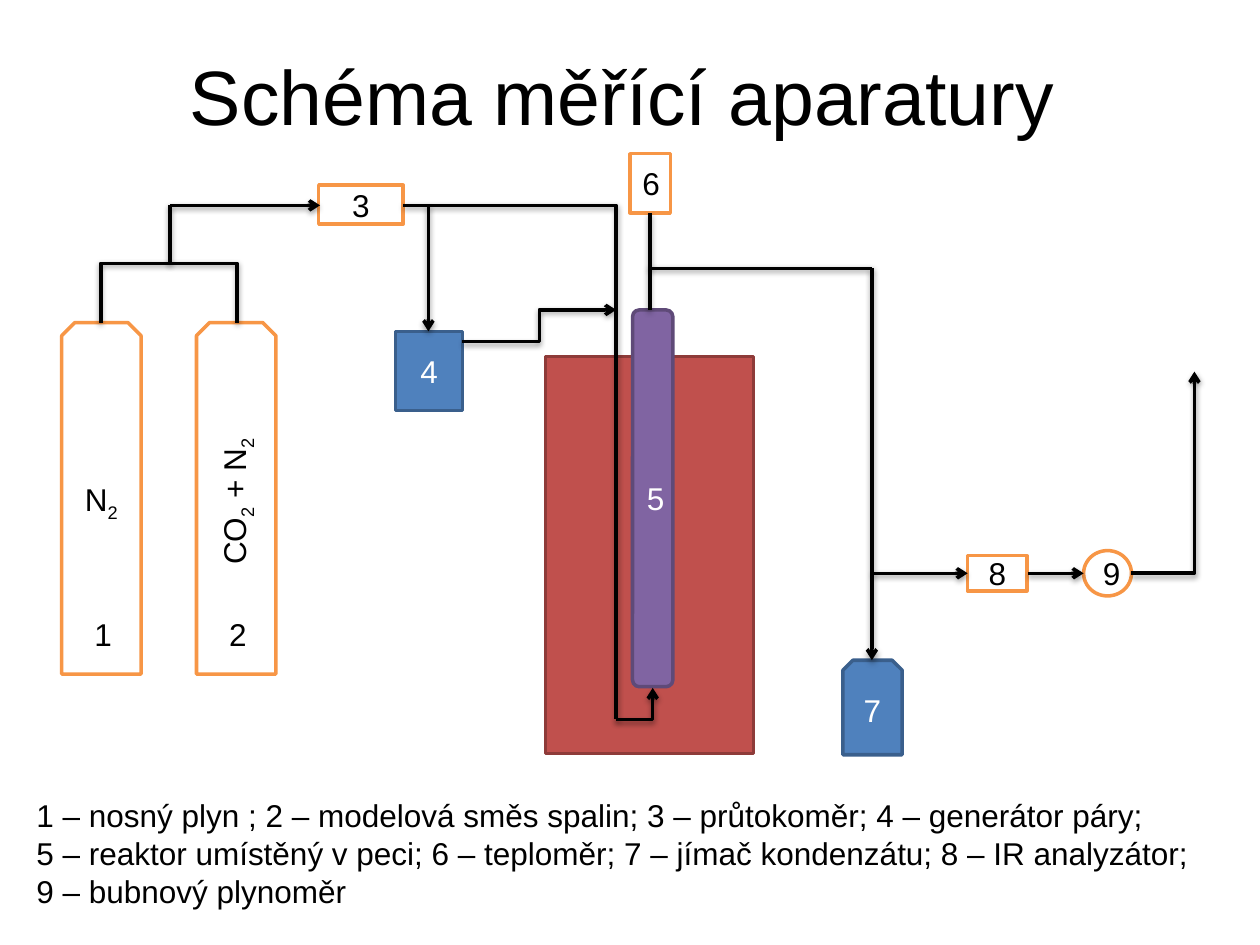
from lxml import etree
from pptx import Presentation
from pptx import util as u
from pptx.dml.color import RGBColor
from pptx.enum import shapes, text
from pptx.oxml import parse_xml
from pptx.oxml.ns import nsdecls, qn

WIDE, HIGH = u.Inches(10), u.Inches(7.5)
CELL = WIDE // 100
FONT = "Arial"

BLACK = RGBColor(0, 0, 0)
WHITE = RGBColor(255, 255, 255)
AMBER = RGBColor(0xF7, 0x96, 0x46)
BLUE = RGBColor(0x4F, 0x81, 0xBD)
NAVY = RGBColor(0x3A, 0x5F, 0x8C)
RED = RGBColor(0xC0, 0x50, 0x4D)
MAROON = RGBColor(0x8E, 0x3B, 0x39)
VIOLET = RGBColor(0x80, 0x64, 0xA2)
PLUM = RGBColor(0x5F, 0x4A, 0x78)

OPEN = (WHITE, AMBER, BLACK)
VESSEL = (BLUE, NAVY, WHITE)
OVEN = (RED, MAROON, WHITE)
CORE = (VIOLET, PLUM, WHITE)

KIND = shapes.MSO_SHAPE
SHADOW = (
    f'<a:effectLst {nsdecls("a")}>'
    '<a:outerShdw blurRad="40000" dist="20000" dir="5400000" rotWithShape="0">'
    '<a:srgbClr val="000000"><a:alpha val="38000"/></a:srgbClr>'
    '</a:outerShdw></a:effectLst>'
)

LEGEND = [
    "1 – nosný plyn ; 2 – modelová směs spalin; 3 – průtokoměr; 4 – generátor páry;",
    "5 – reaktor umístěný v peci; 6 – teploměr; 7 – jímač kondenzátu; 8 – IR analyzátor;",
    "9 – bubnový plynoměr",
]


def cells(*spots):
    return [round(spot * CELL) for spot in spots]


def style(run, size, color):
    run.font.name = FONT
    run.font.size = u.Pt(size)
    run.font.color.rgb = color


def part(slide, kind, area, look, label="", turn=False):
    fill, edge, ink = look
    shape = slide.shapes.add_shape(kind, *cells(*area))
    shape.shadow.inherit = False
    shape.fill.solid()
    shape.fill.fore_color.rgb = fill
    shape.line.color.rgb = edge
    shape.line.width = u.Pt(2)
    frame = shape.text_frame
    frame.vertical_anchor = text.MSO_ANCHOR.MIDDLE
    if turn:
        frame._txBody.bodyPr.set("vert", "vert270")
    line = frame.paragraphs[0]
    line.alignment = text.PP_ALIGN.CENTER
    for index, piece in enumerate(label.split("_") if label else []):
        run = line.add_run()
        run.text = piece
        style(run, 18, ink)
        if index % 2:
            run.font._element.set("baseline", "-25000")


def pipe(slide, start, end, form="line", arrow=False):
    kind = shapes.MSO_CONNECTOR.STRAIGHT if form == "line" else shapes.MSO_CONNECTOR.ELBOW
    link = slide.shapes.add_connector(kind, *cells(*start, *end))
    link.line.color.rgb = BLACK
    link.line.width = u.Pt(2)
    props = link._element.spPr
    props.find(qn("a:prstGeom")).set("prst", form)
    if arrow:
        etree.SubElement(props.find(qn("a:ln")), qn("a:tailEnd"), type="arrow")
    props.append(parse_xml(SHADOW))


def words(slide, area, lines, size=18, title=False):
    box = slide.shapes.add_textbox(*cells(*area))
    frame = box.text_frame
    frame.word_wrap = True
    frame.text = "\n".join(lines)
    if title:
        frame.vertical_anchor = text.MSO_ANCHOR.MIDDLE
    for line in frame.paragraphs:
        if title:
            line.alignment = text.PP_ALIGN.CENTER
        for run in line.runs:
            style(run, size, BLACK)


def parts(slide):
    for left, label, turn in [(4.9, "N_2", False), (15.6, "CO_2_ + N_2", True)]:
        part(slide, KIND.SNIP_2_SAME_RECTANGLE, (left, 25.6, 6.3, 27.9), OPEN, label, turn)
    for kind, area, look, label in [
        (KIND.RECTANGLE, (43.3, 28.3, 16.5, 31.5), OVEN, ""),
        (KIND.RECTANGLE, (31.4, 26.3, 5.3, 6.3), VESSEL, "4"),
        (KIND.ROUNDED_RECTANGLE, (50.2, 24.6, 3.2, 29.9), CORE, "5"),
        (KIND.RECTANGLE, (50, 12.2, 3.2, 4.7), OPEN, "6"),
        (KIND.RECTANGLE, (25.3, 14.7, 6.7, 3.1), OPEN, "3"),
        (KIND.RECTANGLE, (76.8, 44.1, 4.7, 2.8), OPEN, "8"),
        (KIND.SNIP_2_SAME_RECTANGLE, (66.9, 52.4, 4.7, 7.5), VESSEL, "7"),
        (KIND.OVAL, (86, 43.7, 3.8, 3.6), OPEN, "9"),
    ]:
        part(slide, kind, area, look, label)


def pipes(slide):
    feed, join, gas = 16.3, 20.9, 45.5
    stem, inlet, drain, outlet = 13.5, 48.9, 69.2, 21.3
    bend, step = "bentConnector2", "bentConnector3"
    for tank in (8, 18.8):
        pipe(slide, (stem, join), (tank, 25.6), bend)
    pipe(slide, (stem, join), (stem, feed))
    pipe(slide, (stem, feed), (25.4, feed), arrow=True)
    pipe(slide, (32, feed), (inlet, 57.1), bend)
    pipe(slide, (34, feed), (34, 26.3), arrow=True)
    pipe(slide, (36.7, 27.1), (inlet, 24.6), step, True)
    pipe(slide, (inlet, 57.1), (51.8, 54.6), bend, True)
    pipe(slide, (51.6, outlet), (51.6, 16.9))
    pipe(slide, (drain, outlet), (51.6, 24.6), bend)
    pipe(slide, (drain, outlet), (drain, 52.4), arrow=True)
    pipe(slide, (drain, gas), (76.8, gas), arrow=True)
    pipe(slide, (81.6, gas), (86, gas), arrow=True)
    pipe(slide, (89.8, gas), (94.8, 29.5), bend, True)


def main():
    deck = Presentation()
    deck.slide_width, deck.slide_height = WIDE, HIGH
    slide = deck.slides.add_slide(deck.slide_layouts[6])
    parts(slide)
    pipes(slide)
    for left, mark in [(6.5, "1"), (17.2, "2")]:
        words(slide, (left, 48.3, 3.1, 4), [mark])
    words(slide, (1.9, 62.7, 96.1, 10.1), LEGEND)
    words(slide, (4.4, 1.3, 90, 12.5), ["Schéma měřící aparatury"], 44, True)
    deck.save("out.pptx")


if __name__ == "__main__":
    main()
